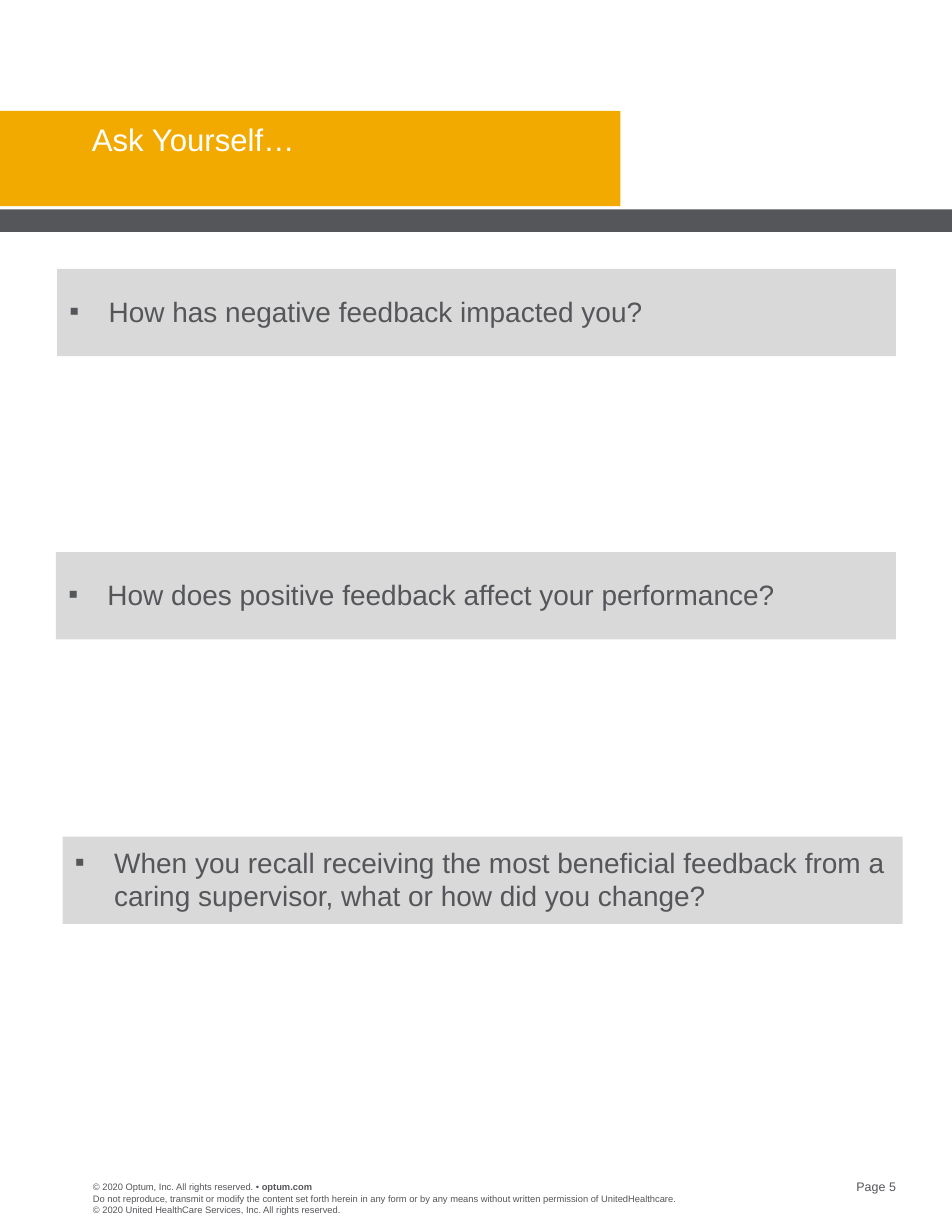
from dataclasses import dataclass

from lxml import etree
from pptx import Presentation
from pptx.dml.color import RGBColor
from pptx.enum import shapes, text
from pptx.oxml import ns
from pptx.util import Inches, Pt


@dataclass(frozen=True)
class Theme:
    font: str = "Arial"
    amber: RGBColor = RGBColor(0xF2, 0xAA, 0x00)
    slate: RGBColor = RGBColor(0x55, 0x56, 0x5A)
    panel: RGBColor = RGBColor(0xD9, 0xD9, 0xD9)
    white: RGBColor = RGBColor(0xFF, 0xFF, 0xFF)
    title: int = 20
    question: int = 18
    page: int = 8
    legal: int = 6


theme = Theme()

prs = Presentation()
prs.slide_width, prs.slide_height = Inches(8.5), Inches(11)
slide = prs.slides.add_slide(prs.slide_layouts[5])


def add_block(left, top, width, height, color):
    block = slide.shapes.add_shape(
        shapes.MSO_SHAPE.RECTANGLE, Inches(left), Inches(top), Inches(width), Inches(height))
    block.shadow.inherit = False
    block.fill.solid()
    block.fill.fore_color.rgb = color
    block.line.fill.background()
    return block


def format_text(frame, size, color, align=text.PP_ALIGN.LEFT, insets=(0, 0, 0, 0)):
    frame.word_wrap = True
    frame.margin_left, frame.margin_top, frame.margin_right, frame.margin_bottom = map(Inches, insets)
    for paragraph in frame.paragraphs:
        paragraph.alignment = align
        for run in paragraph.runs:
            run.font.name = theme.font
            run.font.size = Pt(size)
            run.font.color.rgb = color


add_block(0, 0.99, 5.54, 0.85, theme.amber)
add_block(0, 1.87, 8.5, 0.2, theme.slate)

title = slide.shapes.title
title.left, title.top, title.width, title.height = map(Inches, (0.82, 1.11, 4.5, 0.3))
title.text_frame.text = "Ask Yourself…"
title.text_frame.vertical_anchor = text.MSO_ANCHOR.TOP
title.text_frame.auto_size = text.MSO_AUTO_SIZE.SHAPE_TO_FIT_TEXT
title.text_frame.paragraphs[0].line_spacing = 0.9
format_text(title.text_frame, theme.title, theme.white)
title._element.getparent().append(title._element)

questions = [
    (0.51, 2.4, 7.49, "How has negative feedback impacted you?"),
    (0.5, 4.93, 7.5, "How does positive feedback affect your performance?"),
    (0.56, 7.47, 7.5, "When you recall receiving the most beneficial feedback from a caring "
                      "supervisor, what or how did you change?"),
]
for left, top, width, wording in questions:
    question = add_block(left, top, width, 0.78, theme.panel).text_frame
    question.text = wording
    question.vertical_anchor = text.MSO_ANCHOR.MIDDLE
    properties = question.paragraphs[0]._p.get_or_add_pPr()
    properties.set("marL", str(Inches(0.35)))
    properties.set("indent", str(Inches(-0.35)))
    bullet_color = etree.SubElement(properties, ns.qn("a:buClr"))
    etree.SubElement(bullet_color, ns.qn("a:srgbClr"), val=str(theme.slate))
    etree.SubElement(properties, ns.qn("a:buFont"), typeface=theme.font)
    etree.SubElement(properties, ns.qn("a:buChar"), char="▪")
    format_text(question, theme.question, theme.slate, insets=(0.11, 0, 0.11, 0.03))

left_align, right_align = text.PP_ALIGN.LEFT, text.PP_ALIGN.RIGHT
footers = [
    (0.83, 10.55, 2, 0.1, ["© 2020 Optum, Inc. All rights reserved. • ", "optum.com"],
     theme.legal, left_align),
    (7.19, 10.53, 0.81, 0.13, ["Page 5"], theme.page, right_align),
    (0.83, 10.65, 5.26, 0.2,
     ["Do not reproduce, transmit or modify the content set forth herein in any form or by any "
      "means without written permission of UnitedHealthcare. "
      "© 2020 United HealthCare Services, Inc. All rights reserved."],
     theme.legal, left_align),
]
for left, top, width, height, pieces, size, align in footers:
    footer = slide.shapes.add_textbox(
        Inches(left), Inches(top), Inches(width), Inches(height)).text_frame
    for piece in pieces:
        run = footer.paragraphs[0].add_run()
        run.text = piece
        run.font.bold = piece == "optum.com"
    footer.auto_size = text.MSO_AUTO_SIZE.SHAPE_TO_FIT_TEXT
    format_text(footer, size, theme.slate, align)

prs.save("out.pptx")
